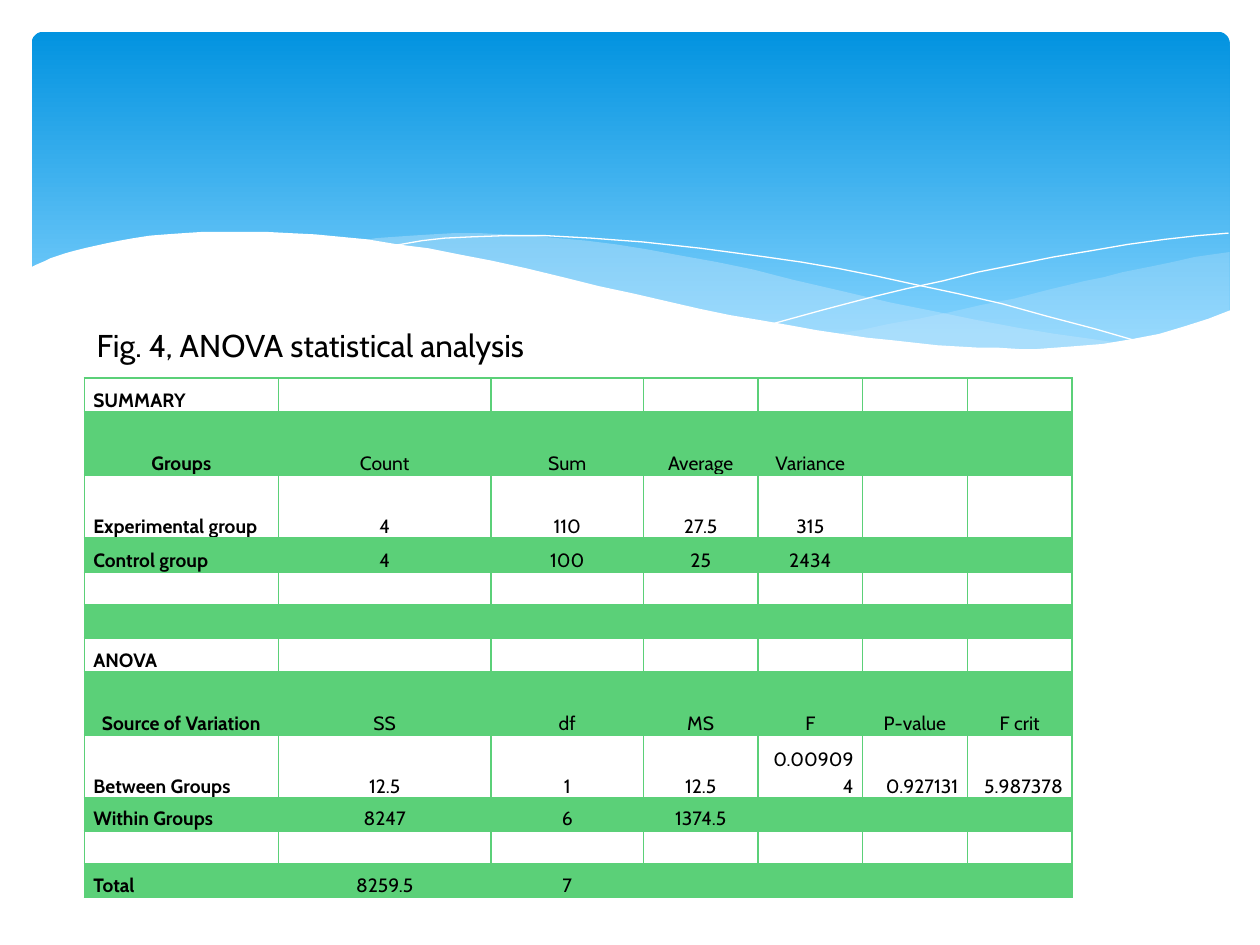
import lxml.etree
import pptx
import pptx.dml.color
import pptx.enum.shapes
import pptx.enum.text
import pptx.oxml.ns
import pptx.util

Cm, Pt = pptx.util.Cm, pptx.util.Pt
ALIGN = pptx.enum.text.PP_ALIGN
qn = pptx.oxml.ns.qn
rgb = pptx.dml.color.RGBColor.from_string

THEME = {
    "font": "Cabin", "text": "000000", "white": "FFFFFF",
    "sky_top": "0293E0", "sky_bottom": "83D3FE", "wave": "C6E7FC",
    "green": "5BD078", "caption_size": Pt(18), "cell_size": Pt(11),
}


def fill_solid(fill, color, opacity=100):
    fill.solid()
    fill.fore_color.rgb = rgb(color)
    if opacity < 100:
        clr = fill._xPr.find(".//" + qn("a:srgbClr"))
        lxml.etree.SubElement(clr, qn("a:alpha"), val=str(opacity * 1000))


def set_font(p, size, bold=False):
    for r in p.runs:
        r.font.name, r.font.size, r.font.bold = THEME["font"], size, bold
        r.font.color.rgb = rgb(THEME["text"])


prs = pptx.Presentation()
prs.slide_width, prs.slide_height = Cm(25.4), Cm(19.05)
s = prs.slides.add_slide(prs.slide_layouts[6])

# Sky panel
sp = s.shapes.add_shape(pptx.enum.shapes.MSO_SHAPE.ROUNDED_RECTANGLE,
                        Cm(0.64), Cm(0.64), Cm(24.15), Cm(6.86))
sp.adjustments[0] = 0.034
sp.shadow.inherit = False
sp.line.fill.background()
sp.fill.gradient()
sp.fill.gradient_angle = 270
top, bottom = sp.fill.gradient_stops
top.position, top.color.rgb = 0, rgb(THEME["sky_top"])
bottom.position, bottom.color.rgb = 0.9, rgb(THEME["sky_bottom"])

# Waves, in hundredths of an inch: points, fill colour (None for a line), opacity
right_wave = [
    (976, 200), (962, 202), (948, 204), (935, 207), (921, 210), (906, 213),
    (891, 216), (876, 220), (861, 223), (832, 230), (805, 237), (779, 242),
    (753, 248), (729, 253), (706, 257), (683, 262), (661, 265), (691, 269),
    (719, 272), (745, 275), (769, 277), (792, 277), (814, 278), (835, 277),
    (854, 276), (872, 274), (889, 272), (905, 269), (921, 265), (935, 262),
    (949, 257), (963, 252), (976, 247)]
middle_wave = [
    (893, 273), (866, 269), (837, 265), (807, 260), (775, 254), (741, 247),
    (706, 240), (668, 231), (629, 222), (598, 214), (569, 208), (541, 203),
    (514, 198), (489, 194), (465, 191), (442, 189), (420, 187), (399, 186),
    (380, 185), (361, 185), (344, 186), (328, 187), (313, 188), (299, 189),
    (286, 191), (323, 196), (362, 203), (404, 211), (449, 222), (491, 232),
    (530, 240), (566, 248), (601, 255), (634, 261), (665, 266), (695, 270),
    (722, 274), (748, 276), (773, 277), (796, 278), (818, 278), (838, 278),
    (857, 277), (876, 275)]
falling_line = [
    (309, 195), (318, 194), (335, 191), (353, 189), (374, 188), (401, 187),
    (433, 187), (469, 189), (510, 192), (556, 197), (608, 204), (636, 208),
    (665, 213), (695, 219), (727, 226), (760, 233), (795, 241), (831, 251),
    (869, 261), (907, 272)]
rising_line = [
    (613, 257), (624, 254), (653, 246), (672, 241), (695, 235), (720, 229),
    (748, 223), (776, 216), (806, 210), (836, 204), (866, 199), (895, 194),
    (924, 190), (951, 187), (975, 185)]
white_wave = [
    (977, 246), (959, 253), (940, 259), (920, 265), (899, 269), (875, 273),
    (850, 275), (823, 277), (809, 277), (793, 276), (778, 276), (761, 275),
    (744, 274), (726, 272), (708, 270), (688, 268), (668, 265), (648, 262),
    (626, 258), (603, 254), (579, 250), (555, 245), (529, 239), (503, 233),
    (475, 227), (447, 220), (418, 213), (391, 207), (365, 202), (340, 197),
    (316, 194), (292, 190), (271, 188), (250, 186), (230, 185), (211, 184),
    (193, 184), (177, 184), (161, 184), (146, 185), (132, 186), (119, 187),
    (106, 189), (95, 191), (85, 193), (76, 195), (67, 197), (59, 199),
    (52, 201), (46, 203), (40, 205), (36, 207), (29, 210), (23, 213),
    (23, 329), (977, 329)]

for points, color, opacity in [
        (right_wave, THEME["wave"], 29), (middle_wave, THEME["wave"], 40),
        (falling_line, None, 100), (rising_line, None, 100),
        (white_wave, THEME["white"], 100)]:
    builder = s.shapes.build_freeform(*points[0], scale=Cm(0.0254))
    builder.add_line_segments(points[1:], close=color is not None)
    sp = builder.convert_to_shape()
    sp.shadow.inherit = False
    if color:
        fill_solid(sp.fill, color, opacity)
        sp.line.fill.background()
    else:
        sp.fill.background()
        sp.line.color.rgb = rgb(THEME["white"])
        sp.line.width = Pt(0)

# ANOVA table
rows = [
    ["SUMMARY"],
    ["Groups", "Count", "Sum", "Average", "Variance"],
    ["Experimental group", "4", "110", "27.5", "315"],
    ["Control group", "4", "100", "25", "2434"],
    [],
    [],
    ["ANOVA"],
    ["Source of Variation", "SS", "df", "MS", "F", "P-value", "F crit"],
    ["Between Groups", "12.5", "1", "12.5", "0.009094", "0.927131", "5.987378"],
    ["Within Groups", "8247", "6", "1374.5"],
    [],
    ["Total", "8259.5", "7"],
]
col_widths = [3.91, 4.29, 3.07, 2.31, 2.11, 2.11, 2.11]
row_heights = [0.69, 1.27, 1.27, 0.69, 0.66, 0.66, 0.69, 1.27, 1.27, 0.66, 0.66, 0.69]
header_rows, between_row = (1, 7), 8

table = s.shapes.add_table(len(rows), len(col_widths), Cm(1.7), Cm(7.62),
                           Cm(sum(col_widths)), Cm(sum(row_heights))).table
table.first_row = table.horz_banding = False
for col, width in zip(table.columns, col_widths):
    col.width = Cm(width)
for row, height in zip(table.rows, row_heights):
    row.height = Cm(height)

for i, values in enumerate(rows):
    for j in range(len(col_widths)):
        cell = table.cell(i, j)
        cell.vertical_anchor = pptx.enum.text.MSO_ANCHOR.BOTTOM
        cell.margin_left = cell.margin_right = Cm(0.18)
        cell.margin_top = cell.margin_bottom = 0

        # Borders, with a heavier rule under the first row
        for side in "LRTB":
            heavy = (i, side) in ((0, "B"), (1, "T"))
            ln = lxml.etree.SubElement(cell._tc.get_or_add_tcPr(), qn("a:ln" + side),
                                       w=str(Pt(2 if heavy else 1)))
            solid = lxml.etree.SubElement(ln, qn("a:solidFill"))
            lxml.etree.SubElement(solid, qn("a:srgbClr"), val=THEME["green"])

        # Green bands on every second row
        if i % 2:
            fill_solid(cell.fill, THEME["green"], 20)
        else:
            cell.fill.background()

        p = cell.text_frame.paragraphs[0]
        p.line_spacing = 1.15
        if j < len(values):
            p.text = values[j]
            if i == between_row and j >= 4:
                p.alignment = ALIGN.RIGHT
            elif j > 0 or i in header_rows:
                p.alignment = ALIGN.CENTER
            set_font(p, THEME["cell_size"], bold=j == 0)
        else:
            # Keeps empty cells from stretching their row
            lxml.etree.SubElement(p._p, qn("a:endParaRPr"),
                                  sz=str(int(THEME["cell_size"].pt * 100)))

# Caption
tf = s.shapes.add_textbox(Cm(1.7), Cm(6.45), Cm(13.13), Cm(1.07)).text_frame
tf.word_wrap = True
tf.auto_size = pptx.enum.text.MSO_AUTO_SIZE.SHAPE_TO_FIT_TEXT
tf.text = "Fig. 4, ANOVA statistical analysis"
set_font(tf.paragraphs[0], THEME["caption_size"])

prs.save("out.pptx")
